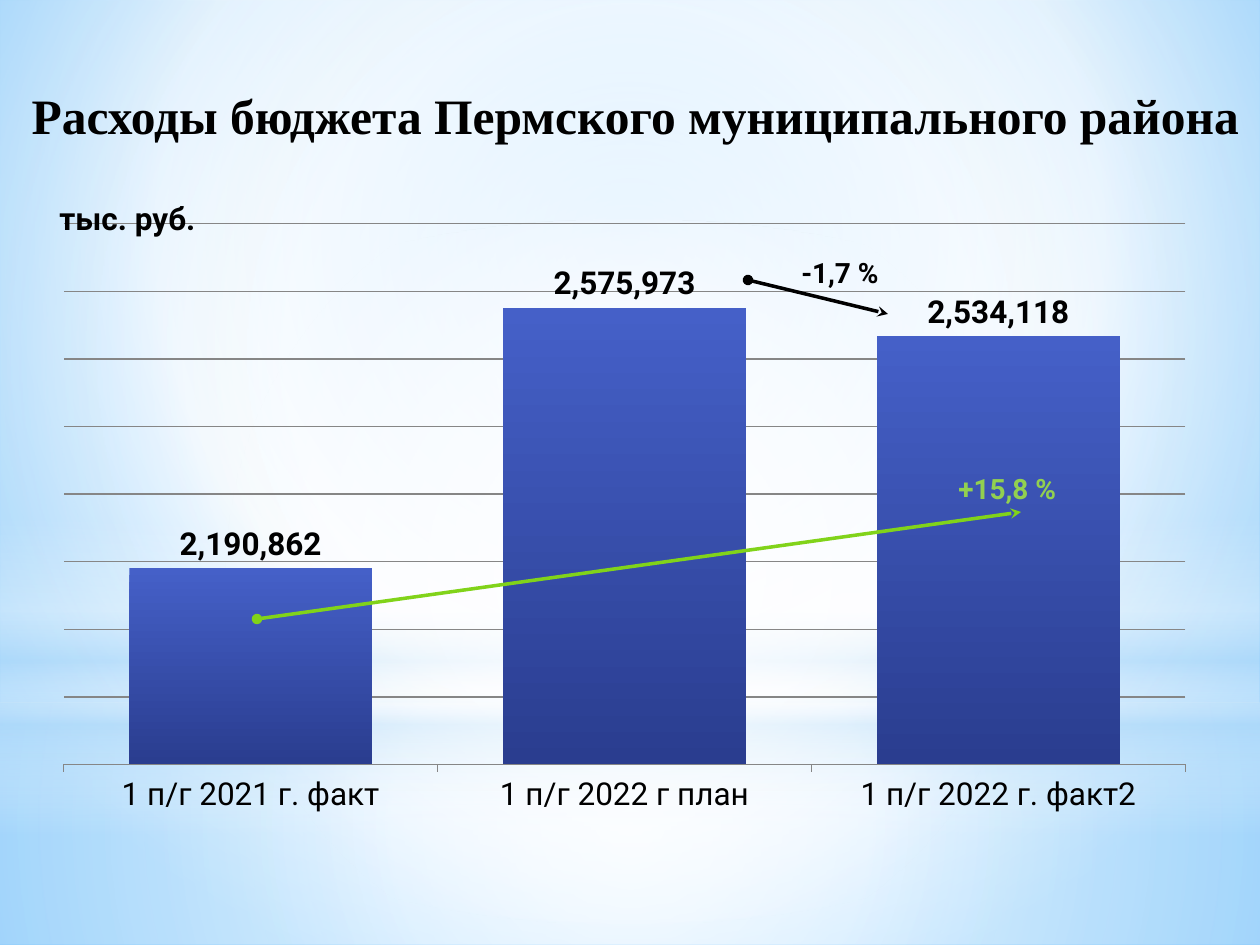
from typing import NamedTuple

from lxml import etree
from pptx import Presentation
from pptx.chart.data import CategoryChartData
from pptx.dml.color import RGBColor
from pptx.enum.chart import XL_CHART_TYPE, XL_LABEL_POSITION, XL_TICK_LABEL_POSITION, XL_TICK_MARK
from pptx.enum.shapes import MSO_CONNECTOR, MSO_SHAPE
from pptx.enum.text import MSO_ANCHOR, PP_ALIGN
from pptx.oxml import parse_xml
from pptx.oxml.ns import nsdecls, qn
from pptx.util import Emu, Pt

COLUMNS = XL_CHART_TYPE.COLUMN_CLUSTERED
OUTSIDE_END = XL_LABEL_POSITION.OUTSIDE_END
LOW = XL_TICK_LABEL_POSITION.LOW
TICK_OUT = XL_TICK_MARK.OUTSIDE
STRAIGHT = MSO_CONNECTOR.STRAIGHT
RECTANGLE, OVAL = MSO_SHAPE.RECTANGLE, MSO_SHAPE.OVAL
TOP, MIDDLE = MSO_ANCHOR.TOP, MSO_ANCHOR.MIDDLE
LEFT, CENTER = PP_ALIGN.LEFT, PP_ALIGN.CENTER

BLACK = RGBColor(0x00, 0x00, 0x00)
WHITE = RGBColor(0xFF, 0xFF, 0xFF)
GRID_GREY = RGBColor(0x86, 0x86, 0x86)
PALE_BLUE = RGBColor(0xB4, 0xDC, 0xFA)
SKY = RGBColor(0x9E, 0xD5, 0xFF)
DEEP_SKY = RGBColor(0x5B, 0xB9, 0xFF)
BAR_TOP = RGBColor(0x45, 0x60, 0xC8)
BAR_BOTTOM = RGBColor(0x2A, 0x3D, 0x8F)
ARROW_GREEN = RGBColor(0x81, 0xD3, 0x1A)
TEXT_GREEN = RGBColor(0x92, 0xD0, 0x50)

SANS, SERIF = "Roboto", "Times New Roman"
PX_PER_INCH = 126


def px(length: int) -> Emu:
    return Emu(round(length * 914400 / PX_PER_INCH))


class Box(NamedTuple):
    left: int
    top: int
    width: int
    height: int

    def emu(self) -> list[Emu]:
        return [px(length) for length in self]


class Stop(NamedTuple):
    position: int
    color: RGBColor
    opacity: int = 100


class Gradient(NamedTuple):
    stops: list[Stop]
    focus: tuple[int, int, int, int] | None = (50, 50, 50, 50)


class Layer(NamedTuple):
    kind: int
    box: Box
    gradient: Gradient


class Span(NamedTuple):
    text: str
    size: float
    font: str = SANS
    color: RGBColor = BLACK


class Label(NamedTuple):
    box: Box
    spans: list[Span]
    align: int = LEFT
    anchor: int = TOP


class Arrow(NamedTuple):
    start: tuple[int, int]
    end: tuple[int, int]
    color: RGBColor


BACKDROP = Gradient([Stop(0, SKY), Stop(60, WHITE), Stop(100, DEEP_SKY)], (20, 10, 20, 60))
LAYERS = [
    Layer(RECTANGLE, Box(0, 703, 1260, 242),
          Gradient([Stop(0, WHITE, 91), Stop(37, WHITE, 76), Stop(100, PALE_BLUE, 79)])),
    Layer(RECTANGLE, Box(0, 0, 1260, 703),
          Gradient([Stop(0, WHITE, 89), Stop(48, WHITE, 62), Stop(100, PALE_BLUE, 79)])),
    Layer(RECTANGLE, Box(0, 519, 1260, 315),
          Gradient([Stop(0, WHITE, 0), Stop(29, WHITE, 30), Stop(45, PALE_BLUE, 40),
                    Stop(55, WHITE, 26), Stop(65, PALE_BLUE, 60), Stop(100, WHITE, 0)], None)),
    Layer(OVAL, Box(0, 220, 1260, 703), Gradient([Stop(0, WHITE), Stop(56, WHITE, 0)])),
]
BAR_FILL = Gradient([Stop(0, BAR_TOP), Stop(100, BAR_BOTTOM)], None)
CHART_BOX = Box(44, 192, 1160, 677)
PLOT_AREA = {"x": 0.017, "y": 0.047, "w": 0.967, "h": 0.799}
EXPENSES = {
    "1 п/г 2021 г. факт": 2190862,
    "1 п/г 2022 г план": 2575973,
    "1 п/г 2022 г. факт2": 2534118,
}
LABELS = [
    Label(Box(0, 37, 1260, 155),
          [Span(" ", 27.3, SERIF),
           Span("Расходы бюджета Пермского муниципального района", 28.3, SERIF)], CENTER, MIDDLE),
    Label(Box(47, 193, 170, 50), [Span("тыс. руб.", 18)], LEFT, MIDDLE),
    Label(Box(946, 465, 149, 47), [Span("+15,8 %", 16, SANS, TEXT_GREEN)]),
    Label(Box(789, 249, 149, 47), [Span("-1,7 %", 16)]),
]
ARROWS = [
    Arrow((257, 619), (1021, 512), ARROW_GREEN),
    Arrow((748, 280), (888, 314), BLACK),
]


def apply_gradient(fill, holder, gradient: Gradient) -> None:
    fill.solid()
    stops = "".join(
        f'<a:gs pos="{stop.position * 1000}"><a:srgbClr val="{stop.color}">'
        f'<a:alpha val="{stop.opacity * 1000}"/></a:srgbClr></a:gs>'
        for stop in gradient.stops
    )
    if gradient.focus is None:
        direction = '<a:lin ang="5400000" scaled="0"/>'
    else:
        edges = " ".join(f'{side}="{share * 1000}"' for side, share in zip("ltrb", gradient.focus))
        direction = f'<a:path path="circle"><a:fillToRect {edges}/></a:path>'
    xml = f'<a:gradFill {nsdecls("a")} rotWithShape="1"><a:gsLst>{stops}</a:gsLst>{direction}</a:gradFill>'
    holder.replace(holder.find(qn("a:solidFill")), parse_xml(xml))


def add_layer(page, layer: Layer) -> None:
    shape = page.shapes.add_shape(layer.kind, *layer.box.emu())
    shape.shadow.inherit = False
    shape.line.fill.background()
    apply_gradient(shape.fill, shape.element.spPr, layer.gradient)


def add_label(page, label: Label) -> None:
    frame = page.shapes.add_textbox(*label.box.emu()).text_frame
    frame.word_wrap = label.align == LEFT
    frame.vertical_anchor = label.anchor
    para = frame.paragraphs[0]
    para.alignment = label.align
    for span in label.spans:
        run = para.add_run()
        run.text = span.text
        run.font.name = span.font
        run.font.size = Pt(span.size)
        run.font.bold = True
        run.font.color.rgb = span.color


def add_arrow(page, arrow: Arrow) -> None:
    ends = [px(length) for length in arrow.start + arrow.end]
    connector = page.shapes.add_connector(STRAIGHT, *ends)
    connector.line.color.rgb = arrow.color
    connector.line.width = Pt(2)
    properties = connector.element.spPr
    line = properties.find(qn("a:ln"))
    etree.SubElement(line, qn("a:headEnd"), type="oval")
    etree.SubElement(line, qn("a:tailEnd"), type="stealth")
    etree.SubElement(properties, qn("a:effectLst"))


def place_plot(chart) -> None:
    area = chart.element.find(".//" + qn("c:plotArea"))
    for old in area.findall(qn("c:layout")):
        area.remove(old)
    sizes = "".join(f'<c:{side} val="{share}"/>' for side, share in PLOT_AREA.items())
    area.insert(0, parse_xml(
        f'<c:layout {nsdecls("c")}><c:manualLayout><c:layoutTarget val="inner"/>'
        f'<c:xMode val="edge"/><c:yMode val="edge"/>{sizes}</c:manualLayout></c:layout>'))


def style_font(font, bold: bool) -> None:
    font.name, font.size, font.bold = SANS, Pt(18), bold
    font.color.rgb = BLACK


def add_expense_chart(page) -> None:
    data = CategoryChartData(number_format="#,##0")
    data.categories = EXPENSES.keys()
    data.add_series("Series 1", EXPENSES.values())
    chart = page.shapes.add_chart(COLUMNS, *CHART_BOX.emu(), data).chart
    chart.has_title = chart.has_legend = False
    style_font(chart.font, False)
    place_plot(chart)

    values = chart.value_axis
    values.minimum_scale, values.maximum_scale, values.major_unit = 1900000, 2700000, 100000
    values.has_major_gridlines = True
    values.major_gridlines.format.line.color.rgb = GRID_GREY
    values.visible = False
    categories = chart.category_axis
    categories.major_tick_mark = TICK_OUT
    categories.tick_label_position = LOW
    categories.format.line.color.rgb = GRID_GREY

    plot = chart.plots[0]
    plot.gap_width = 54
    plot.vary_by_categories = False
    series = plot.series[0]
    fill = series.format.fill
    apply_gradient(fill, series._element.find(qn("c:spPr")), BAR_FILL)
    labels = series.data_labels
    labels.show_value = True
    labels.position = OUTSIDE_END
    labels.number_format, labels.number_format_is_linked = "#,##0", False
    style_font(labels.font, True)


def main() -> None:
    deck = Presentation()
    deck.slide_width, deck.slide_height = px(1260), px(945)
    page = deck.slides.add_slide(deck.slide_layouts[6])
    fill = page.background.fill
    apply_gradient(fill, page.element.find(".//" + qn("p:bgPr")), BACKDROP)
    for layer in LAYERS:
        add_layer(page, layer)
    add_expense_chart(page)
    for arrow in ARROWS:
        add_arrow(page, arrow)
    for label in LABELS:
        add_label(page, label)
    deck.save("out.pptx")


if __name__ == "__main__":
    main()
